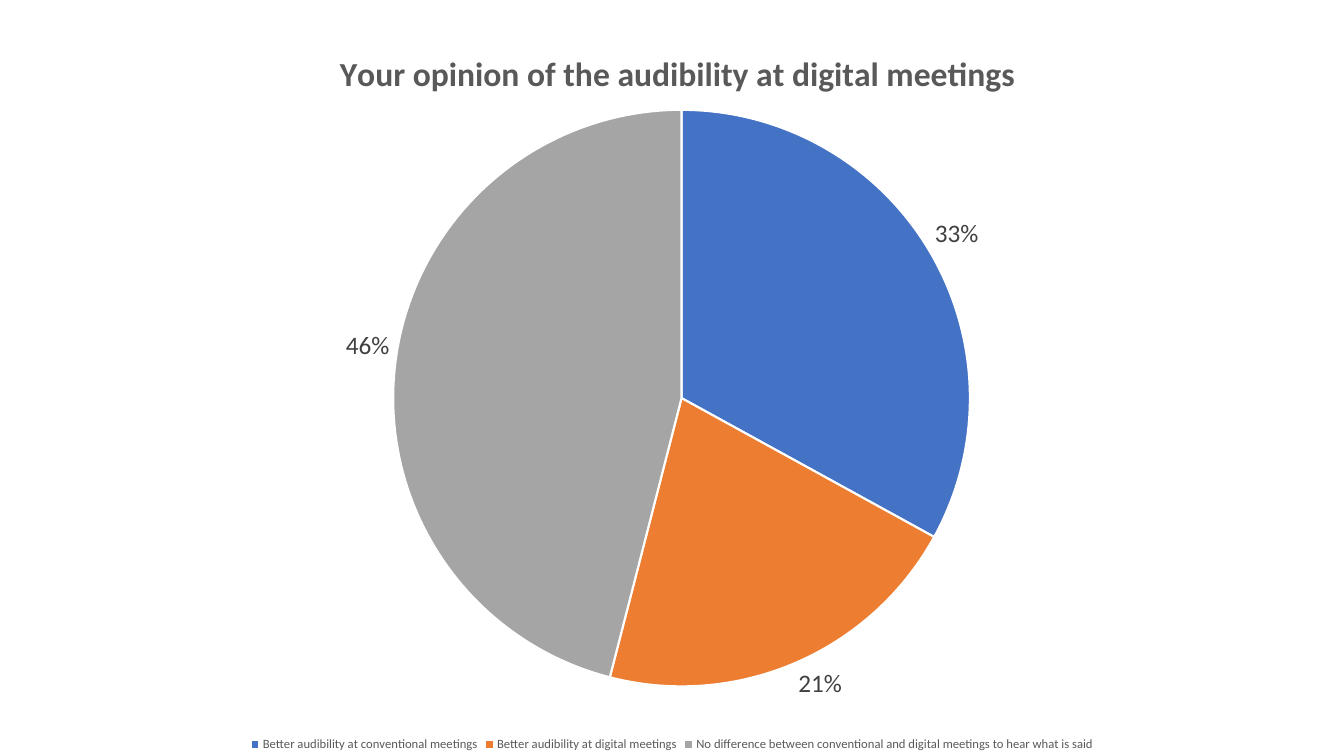
from dataclasses import dataclass

from lxml.etree import SubElement
from pptx import Presentation
from pptx.chart.data import CategoryChartData
from pptx.dml.color import RGBColor
from pptx.enum.chart import XL_CHART_TYPE, XL_LABEL_POSITION, XL_LEGEND_POSITION
from pptx.oxml.ns import qn
from pptx.util import Inches, Pt

# Content
TITLE = "Your opinion of the audibility at digital meetings"
ANSWERS = [
    ("Better audibility at conventional meetings", 0.33, "4472C4"),
    ("Better audibility at digital meetings", 0.21, "ED7D31"),
    ("No difference between conventional and digital meetings to hear what is said",
     0.46, "A5A5A5"),
]

# Geometry in inches
SLIDE_WIDTH, SLIDE_HEIGHT = 13.33, 7.5
CHART_TOP = 0.14
CHART_HEIGHT = SLIDE_HEIGHT - CHART_TOP
PIE_LEFT, PIE_TOP, PIE_SIZE = 3.9, 1.09, 5.72
TITLE_LEFT, TITLE_TOP = 3.31, 0.45


@dataclass(frozen=True)
class Theme:
    font: str = "Calibri"
    heading: str = "595959"
    label: str = "404040"
    edge: str = "FFFFFF"
    title_size: int = 24
    label_size: int = 18
    legend_size: int = 9
    base_size: int = 10


THEME = Theme()


def style_font(font, size, color, bold=False):
    font.name = THEME.font
    font.size = Pt(size)
    font.bold = bold
    font.color.rgb = RGBColor.from_string(color)


def place(parent, position, left, top, size=None):
    """Give a chart part a manual layout, as the child at the given position."""
    layout = parent.find(qn("c:layout"))
    if layout is not None:
        parent.remove(layout)
    layout = SubElement(parent, qn("c:layout"))
    parent.insert(position, layout)
    settings = {"layoutTarget": "inner"} if size else {}
    settings.update(xMode="edge", yMode="edge", x=left / SLIDE_WIDTH,
                    y=(top - CHART_TOP) / CHART_HEIGHT)
    if size:
        settings.update(w=size / SLIDE_WIDTH, h=size / CHART_HEIGHT)
    manual = SubElement(layout, qn("c:manualLayout"))
    for name, value in settings.items():
        SubElement(manual, qn(f"c:{name}")).set("val", str(value))


def add_pie(slide):
    data = CategoryChartData(number_format="0%")
    data.categories = [answer for answer, _, _ in ANSWERS]
    data.add_series("Series 1", [share for _, share, _ in ANSWERS])
    chart = slide.shapes.add_chart(
        XL_CHART_TYPE.PIE, Inches(0), Inches(CHART_TOP),
        Inches(SLIDE_WIDTH), Inches(CHART_HEIGHT), data).chart
    chart.font.name = THEME.font
    chart.font.size = Pt(THEME.base_size)
    return chart


def format_title(chart):
    title = chart.chart_title
    run = title.text_frame.paragraphs[0].add_run()
    run.text = TITLE
    style_font(run.font, THEME.title_size, THEME.heading, bold=True)
    place(title._element, 1, TITLE_LEFT, TITLE_TOP)


def format_slices(chart):
    plot = chart.plots[0]
    plot.vary_by_categories = True
    series = plot.series[0]
    for index, (_, _, color) in enumerate(ANSWERS):
        point_format = series.points[index].format
        point_format.fill.solid()
        point_format.fill.fore_color.rgb = RGBColor.from_string(color)
        point_format.line.color.rgb = RGBColor.from_string(THEME.edge)
        point_format.line.width = Pt(1.5)

    # Percentages outside the slices
    labels = series.data_labels
    labels.show_value = True
    labels.number_format = "0%"
    labels.number_format_is_linked = False
    labels.position = XL_LABEL_POSITION.OUTSIDE_END
    style_font(labels.font, THEME.label_size, THEME.label)

    # Fixed square for the pie
    place(chart._chartSpace.chart.plotArea, 0, PIE_LEFT, PIE_TOP, PIE_SIZE)


def format_legend(chart):
    chart.has_legend = True
    chart.legend.position = XL_LEGEND_POSITION.BOTTOM
    chart.legend.include_in_layout = False
    style_font(chart.legend.font, THEME.legend_size, THEME.heading)


def main():
    presentation = Presentation()
    presentation.slide_width = Inches(SLIDE_WIDTH)
    presentation.slide_height = Inches(SLIDE_HEIGHT)
    slide = presentation.slides.add_slide(presentation.slide_layouts[6])

    chart = add_pie(slide)
    format_title(chart)
    format_slices(chart)
    format_legend(chart)
    presentation.save("out.pptx")


if __name__ == "__main__":
    main()
